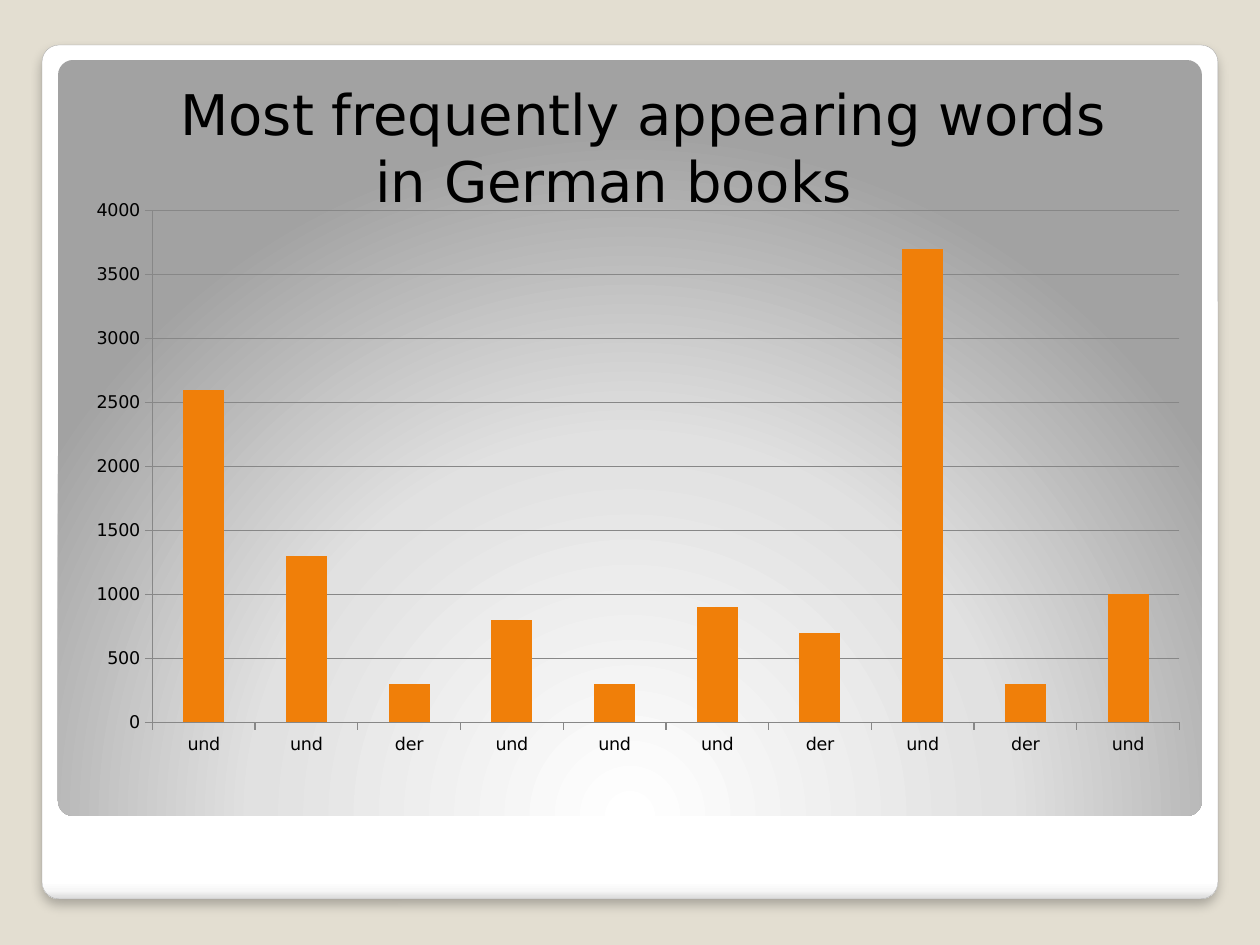
from lxml import etree
from pptx import Presentation
from pptx.chart.data import CategoryChartData as Data
from pptx.dml.color import RGBColor as RGB
from pptx.enum.chart import XL_CHART_TYPE as Kind, XL_TICK_MARK as Tick
from pptx.enum.shapes import MSO_SHAPE as Shape
from pptx.enum.text import MSO_ANCHOR as Anchor
from pptx.oxml import parse_xml
from pptx.util import Pt

PX = 914400 // 126
FONT = "DejaVu Sans"
NS = "http://schemas.openxmlformats.org/drawingml/2006/main"
HUE = {"back": "E3DED1", "edge": "A4A4A4", "text": "000000",
       "bar": "F07F09", "grid": "878787"}


def panel(left, top, width, height, stops, flow):
    """Add a rounded panel with a gradient; flow is its direction as XML."""
    box = slide.shapes.add_shape(Shape.ROUNDED_RECTANGLE, left * PX, top * PX,
                                 width * PX, height * PX)
    box.adjustments[0] = 0.02
    box.line.fill.background()
    box.shadow.inherit = False
    marks = "".join(f'<a:gs pos="{pos}000"><a:srgbClr val="{tint}"/></a:gs>'
                    for pos, tint in stops)
    grad = parse_xml(f'<a:gradFill xmlns:a="{NS}" rotWithShape="1">'
                     f'<a:gsLst>{marks}</a:gsLst>{flow}</a:gradFill>')
    box._element.spPr.insert(2, grad)
    return box


def write(para, text, size=32, color="text", indent=0):
    run = para.add_run()
    run.text = text
    run.font.name, run.font.size = FONT, Pt(size)
    run.font.color.rgb = RGB.from_string(HUE[color])
    if indent:
        props = para._p.get_or_add_pPr()
        props.set("marL", str(indent * PX))
        props.set("indent", "0")


deck = Presentation()
deck.slide_width, deck.slide_height = 1260 * PX, 945 * PX
slide = deck.slides.add_slide(deck.slide_layouts[6])
back = slide.background.fill
back.solid()
back.fore_color.rgb = RGB.from_string(HUE["back"])

# Card and inner panel
card = panel(42, 45, 1176, 854,
             [(0, "FFFFFF"), (98, "FFFFFF"), (99, "F7F7F7"), (100, "DADADA")],
             '<a:lin ang="5400000" scaled="0"/>')
card.line.color.rgb = RGB.from_string(HUE["edge"])
card.line.width = Pt(0.16)
glow = card._element.spPr.find(f"{{{NS}}}effectLst")
shade = etree.SubElement(glow, f"{{{NS}}}outerShdw", blurRad=str(Pt(6)),
                         dist=str(Pt(4)), dir="5400000", rotWithShape="0")
tint = etree.SubElement(shade, f"{{{NS}}}srgbClr", val="000000")
etree.SubElement(tint, f"{{{NS}}}alpha", val="25000")

panel(58, 60, 1144, 756, [(0, "FFFFFF"), (55, "E1E1E1"), (100, "A2A2A2")],
      '<a:path path="circle"><a:fillToRect l="50000" t="175000" '
      'r="50000" b="-75000"/></a:path>')

# Word counts
data = Data()
data.categories = ["und", "und", "der", "und", "und",
                   "und", "der", "und", "der", "und"]
data.add_series("Series 1",
                [2600, 1300, 300, 800, 300, 900, 700, 3700, 300, 1000])
chart = slide.shapes.add_chart(Kind.COLUMN_CLUSTERED, 74 * PX, 189 * PX,
                               1128 * PX, 577 * PX, data).chart
chart.has_title = chart.has_legend = False
chart.font.name, chart.font.size = FONT, Pt(10)
chart.font.color.rgb = RGB.from_string(HUE["text"])
plot = chart.plots[0]
plot.gap_width = 150
plot.vary_by_categories = False
bars = plot.series[0].format.fill
bars.solid()
bars.fore_color.rgb = RGB.from_string(HUE["bar"])

cats, vals = chart.category_axis, chart.value_axis
vals.minimum_scale, vals.maximum_scale, vals.major_unit = 0, 4000, 500
vals.has_major_gridlines = True
for axis in (cats, vals):
    axis.major_tick_mark = Tick.OUTSIDE
    axis.minor_tick_mark = Tick.NONE
for part in (cats, vals, vals.major_gridlines):
    part.format.line.color.rgb = RGB.from_string(HUE["grid"])
    part.format.line.width = Pt(0.75)

# Heading
head = slide.shapes.add_textbox(168 * PX, 72 * PX, 1018 * PX, 149 * PX)
frame = head.text_frame
frame.word_wrap = True
frame.vertical_anchor = Anchor.MIDDLE
write(frame.paragraphs[0], "Most frequently appearing words")
write(frame.add_paragraph(), "in German books", indent=195)

deck.save("out.pptx")
